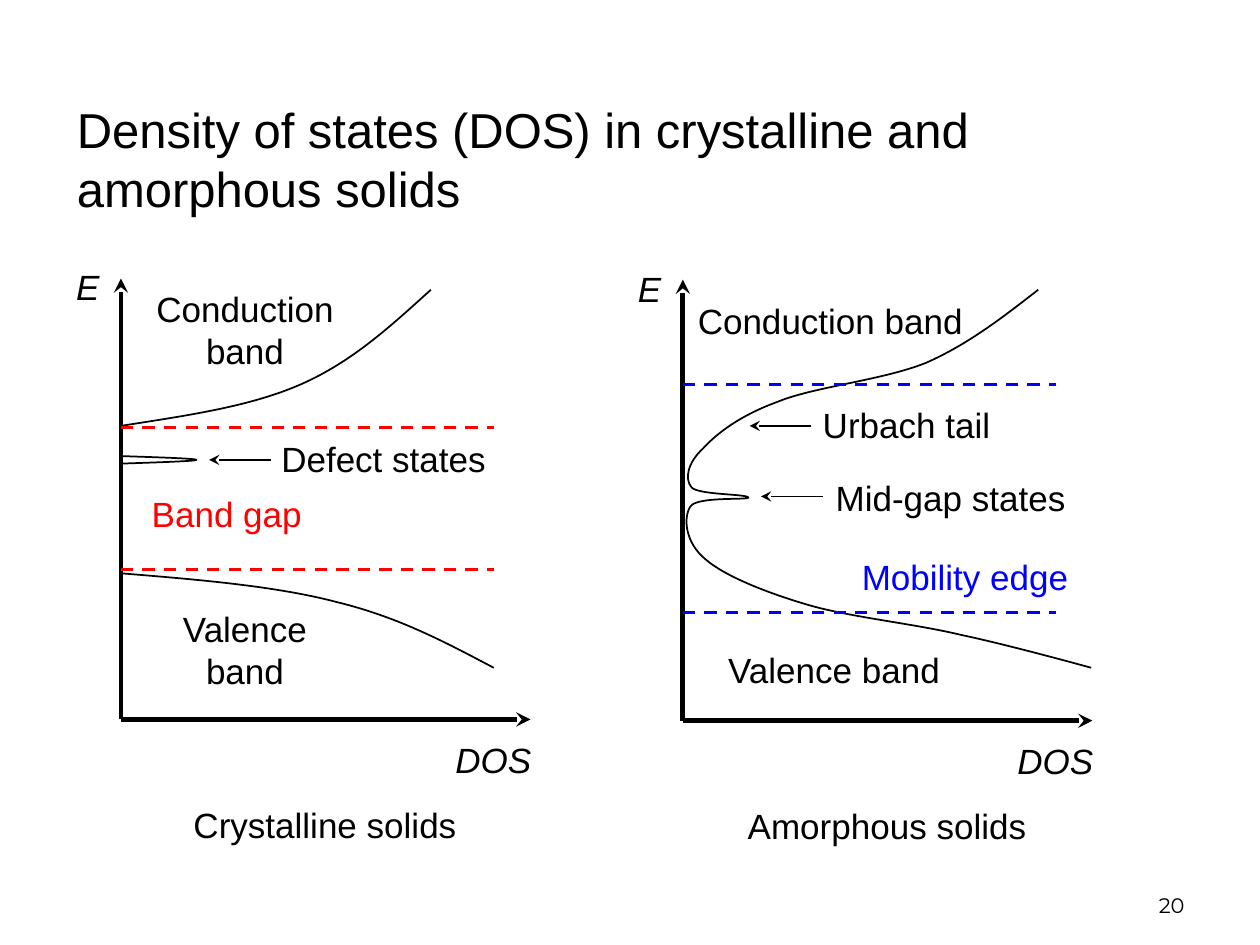
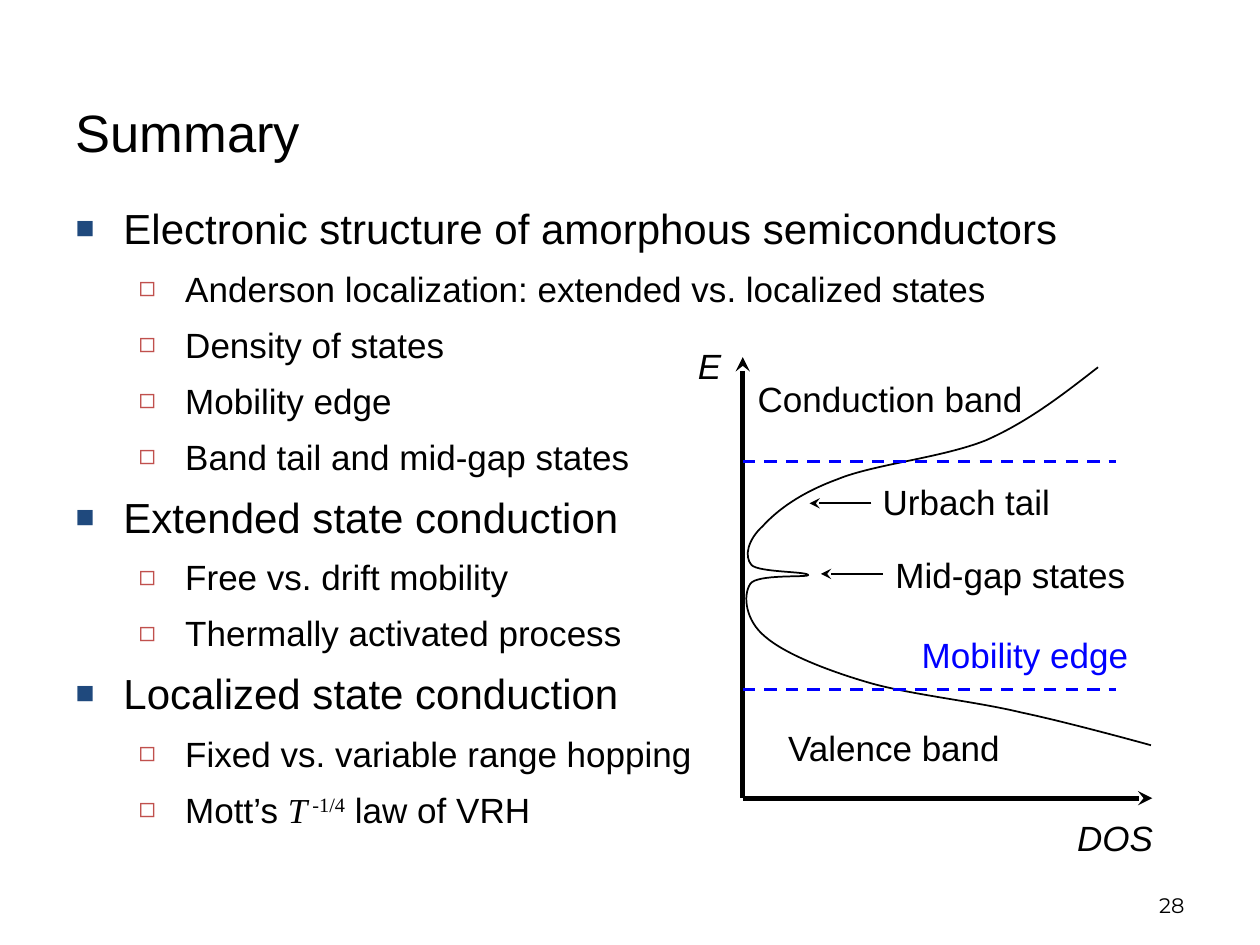
import dataclasses

import lxml.etree
import pptx
import pptx.dml.color
import pptx.enum.dml
import pptx.enum.shapes
import pptx.enum.text
import pptx.oxml.ns
import pptx.util

BLACK = pptx.dml.color.RGBColor(0, 0, 0)
RED = pptx.dml.color.RGBColor(255, 0, 0)
BLUE = pptx.dml.color.RGBColor(0, 0, 255)
NAVY = pptx.dml.color.RGBColor(0x1F, 0x49, 0x7D)
BRICK = pptx.dml.color.RGBColor(0xC0, 0x50, 0x4D)

ALIGN = pptx.enum.text.PP_ALIGN
ANCHOR = pptx.enum.text.MSO_ANCHOR
FIT = pptx.enum.text.MSO_AUTO_SIZE
DASH = pptx.enum.dml.MSO_LINE.DASH
qn = pptx.oxml.ns.qn

COLUMNS, ROWS = 100, 75
CELL = pptx.util.Inches(0.1)
LINE_ROWS = 4.4

BULLETS = [
    dict(size=24, left=0.38, hang=0.38, mark="■", color=NAVY, percent=75),
    dict(size=20, left=0.87, hang=0.37, mark="◻", color=BRICK, percent=80),
]
SUMMARY = [
    ("Electronic structure of amorphous semiconductors",
     ["Anderson localization: extended vs. localized states", "Density of states",
      "Mobility edge", "Band tail and mid-gap states"]),
    ("Extended state conduction",
     ["Free vs. drift mobility", "Thermally activated process"]),
    ("Localized state conduction", ["Fixed vs. variable range hopping"]),
]
MOTT_LAW = [
    ("Mott’s ", {}),
    ("T", dict(font="Times New Roman", italic=True)),
    (" -1/4", dict(font="Times New Roman", raised=30)),
    (" law of VRH", {}),
]

CONDUCTION_CURVE = [(0, 11.7), (5.1, 10.9), (10.2, 10.2), (14.3, 8.4),
                    (18.4, 6.6), (21.5, 3.7), (24.6, 0.9)]
VALENCE_CURVE = [(0, 23.4), (6.1, 23.9), (12.3, 24.4), (17.2, 25.7),
                 (22.1, 26.9), (25.8, 28.9), (29.6, 30.9)]
DEFECT_CURVE = [(0, 14.1), (3, 14.2), (6, 14.3), (6, 14.4),
                (6, 14.5), (3, 14.6), (0, 14.7)]
AMORPHOUS_CURVE = [
    (28.2, 0.8), (25.5, 2.9), (22.7, 5.1), (19.3, 6.6),
    (15.8, 8), (10.4, 8.5), (7.5, 9.7), (4.5, 10.8), (2.7, 12.2), (1.6, 13.4),
    (0.4, 14.5), (0.1, 15.8), (0.7, 16.5), (1.3, 17.1), (5.2, 17), (5.2, 17.3),
    (5.1, 17.5), (1.1, 17.2), (0.6, 18), (0, 18.9), (0.2, 20.9), (1.8, 22.2),
    (3.3, 23.5), (6.5, 24.8), (9.9, 25.8), (13.3, 26.8), (18.4, 27.3), (22.1, 28.2),
    (25.9, 29), (32.4, 30.8), (32.4, 30.8),
]


@dataclasses.dataclass
class Box:
    """A region of the page in grid cells."""
    left: float
    top: float
    width: float
    height: float

    def point(self, x, y):
        """Return a spot inside the region in slide units."""
        return round((self.left + x) * CELL), round((self.top + y) * CELL)

    def inner(self, x, y, width, height=LINE_ROWS):
        """Return a region placed relative to this one."""
        return Box(self.left + x, self.top + y, width, height)

    def extent(self):
        """Return position and size in slide units."""
        return (*self.point(0, 0), round(self.width * CELL), round(self.height * CELL))


def write(para, text, size=20, font="Arial", color=BLACK, italic=False, raised=0):
    """Append formatted text to a paragraph."""
    span = para.add_run()
    span.text = text
    span.font.size = pptx.util.Pt(size)
    span.font.name = font
    span.font.color.rgb = color
    span.font.italic = italic
    if raised:
        span._r.get_or_add_rPr().set("baseline", str(raised * 1000))


def add_label(page, box, text, align=ALIGN.CENTER, wrap=True, fit=FIT.SHAPE_TO_FIT_TEXT,
              anchor=ANCHOR.TOP, **style):
    """Place a text box on the page."""
    frame = page.shapes.add_textbox(*box.extent()).text_frame
    frame.word_wrap = wrap
    frame.auto_size = fit
    frame.vertical_anchor = anchor
    frame.paragraphs[0].alignment = align
    write(frame.paragraphs[0], text, **style)


def add_line(page, box, start, end, color=BLACK, width=1.0, dash=None, arrow=False):
    """Draw a straight line between two spots of a region."""
    line = page.shapes.add_connector(pptx.enum.shapes.MSO_CONNECTOR.STRAIGHT,
                                     *box.point(*start), *box.point(*end))
    line.line.color.rgb = color
    line.line.width = pptx.util.Pt(width)
    if dash:
        line.line.dash_style = dash
    if arrow:
        lxml.etree.SubElement(line.line._get_or_add_ln(), qn("a:tailEnd"), type="stealth")
    lxml.etree.SubElement(line._element.spPr, qn("a:effectLst"))


def add_curve(page, box, points):
    """Draw joined cubic curves: a start, then three points for each curve."""
    start, *rest = [box.point(*point) for point in points]
    builder = page.shapes.build_freeform(*start)
    builder.add_line_segments(rest, close=False)
    curve = builder.convert_to_shape()
    steps = list(curve._element.iter(qn("a:lnTo")))
    for first, second, third in zip(steps[::3], steps[1::3], steps[2::3]):
        first.tag = qn("a:cubicBezTo")
        for step in (second, third):
            first.append(step[0])
            step.getparent().remove(step)
    curve.fill.background()
    curve.line.color.rgb = BLACK
    curve.line.width = pptx.util.Pt(1)
    curve.shadow.inherit = False


def add_axes(page, box):
    """Draw the energy and density axes along the left and bottom of the box."""
    corner = (0, box.height)
    for end in ((0, 0), (box.width, box.height)):
        add_line(page, box, corner, end, width=2.75, arrow=True)
    for text, spot in (("E", (-4.55, -1.5, 3.9)), ("DOS", (25.55, box.height + 1, 8.1))):
        add_label(page, box.inner(*spot), text, align=ALIGN.LEFT, wrap=False, italic=True)


def add_edges(page, box, rows, color):
    """Draw dashed energy levels across the diagram."""
    for row in rows:
        add_line(page, box, (0, row), (29.6, row), color=color, width=1.75, dash=DASH)


def add_pointers(page, box, tips):
    """Draw short arrows that point left at each tip."""
    for x, y in tips:
        add_line(page, box, (x + 4.9, y), (x, y), arrow=True)


def add_labels(page, box, labels):
    """Place labels given as text, spot and colour."""
    for text, spot, color in labels:
        add_label(page, box.inner(*spot), text, color=color)


def add_caption(page, box, text):
    """Name the diagram below its axes."""
    add_label(page, box.inner(3, 41.15, 26.4), text)


def add_crystalline_diagram(page, box):
    """Draw the density of states of a crystalline solid."""
    add_axes(page, box)
    for points in (CONDUCTION_CURVE, VALENCE_CURVE, DEFECT_CURVE):
        add_curve(page, box, points)
    add_edges(page, box, (11.8, 23.1), RED)
    add_pointers(page, box, [(7, 14.4)])
    add_labels(page, box, [
        ("Conduction band", (0.7, 0.2, 18.3, 7.7), BLACK),
        ("Valence band", (0.7, 25.6, 18.3, 7.7), BLACK),
        ("Band gap", (0.5, 16.5, 15.8), RED),
        ("Defect states", (11.2, 12.1, 19.3), BLACK),
    ])


def add_amorphous_diagram(page, box):
    """Draw the density of states of an amorphous solid."""
    add_axes(page, box)
    add_curve(page, box, AMORPHOUS_CURVE)
    add_edges(page, box, (8.3, 26.4), BLUE)
    add_pointers(page, box, [(6.2, 17.2), (5.3, 11.6)])
    add_labels(page, box, [
        ("Conduction band", (-0.2, 1.1, 23.8), BLACK),
        ("Valence band", (-0.1, 28.8, 24.2), BLACK),
        ("Mobility edge", (12.6, 21.4, 19.6), BLUE),
        ("Mid-gap states", (11.1, 15.1, 20.3), BLACK),
        ("Urbach tail", (9.4, 9.3, 16.7), BLACK),
    ])


def place(holder, box, anchor):
    """Move a placeholder into the box and return its text frame."""
    holder.left, holder.top, holder.width, holder.height = box.extent()
    frame = holder.text_frame
    frame.word_wrap = True
    frame.auto_size = FIT.NONE
    frame.vertical_anchor = anchor
    return frame


def add_page(deck, layout, title, title_box, title_size, number):
    """Start a page with its title and page number."""
    page = deck.slides.add_slide(deck.slide_layouts[layout])
    para = place(page.shapes.title, title_box, ANCHOR.MIDDLE).paragraphs[0]
    para.alignment = ALIGN.LEFT
    write(para, title, size=title_size)
    add_label(page, Box(71.7, 68.3, 23.3, 5), str(number), align=ALIGN.RIGHT,
              fit=FIT.NONE, anchor=ANCHOR.BOTTOM, size=12, font="Montserrat")
    return page


def add_bullet(frame, level, spans):
    """Add a list item made of text and format pairs."""
    look = BULLETS[level]
    first = not frame.paragraphs[0].runs
    para = frame.paragraphs[0] if first else frame.add_paragraph()
    para.level = level
    para.space_before = pptx.util.Pt(0 if first else 8)
    props = para._p.get_or_add_pPr()
    props.set("marL", str(pptx.util.Inches(look["left"])))
    props.set("indent", str(-pptx.util.Inches(look["hang"])))
    tint = lxml.etree.SubElement(props, qn("a:buClr"))
    lxml.etree.SubElement(tint, qn("a:srgbClr"), val=str(look["color"]))
    lxml.etree.SubElement(props, qn("a:buSzPct"), val=str(look["percent"] * 1000))
    lxml.etree.SubElement(props, qn("a:buChar"), char=look["mark"])
    for text, style in spans:
        write(para, text, size=look["size"], **style)


def add_summary_list(page, box):
    """Fill the body placeholder with the summary."""
    frame = place(page.placeholders[1], box, ANCHOR.TOP)
    for topic, details in SUMMARY:
        add_bullet(frame, 0, [(topic, {})])
        for detail in details:
            add_bullet(frame, 1, [(detail, {})])
    add_bullet(frame, 1, MOTT_LAW)


def add_comparison_page(deck):
    """Build the page that compares the two kinds of solid."""
    page = add_page(deck, 5, "Density of states (DOS) in crystalline and amorphous solids",
                    Box(5.1, 6.7, 88.3, 11.7), 28, 20)
    crystalline = Box(9.6, 22.1, 32.5, 35)
    amorphous = Box(54.2, 22.2, 32.5, 35)
    add_crystalline_diagram(page, crystalline)
    add_amorphous_diagram(page, amorphous)
    add_caption(page, crystalline, "Crystalline solids")
    add_caption(page, amorphous, "Amorphous solids")


def add_summary_page(deck):
    """Build the summary page."""
    page = add_page(deck, 1, "Summary", Box(5, 5, 88.3, 10.9), 30, 28)
    add_summary_list(page, Box(5, 15.6, 88.3, 53))
    add_amorphous_diagram(page, Box(58.95, 28.35, 32.5, 35))


def main():
    """Build and save the deck."""
    deck = pptx.Presentation()
    deck.slide_width, deck.slide_height = COLUMNS * CELL, ROWS * CELL
    add_comparison_page(deck)
    add_summary_page(deck)
    deck.save("out.pptx")


if __name__ == "__main__":
    main()
